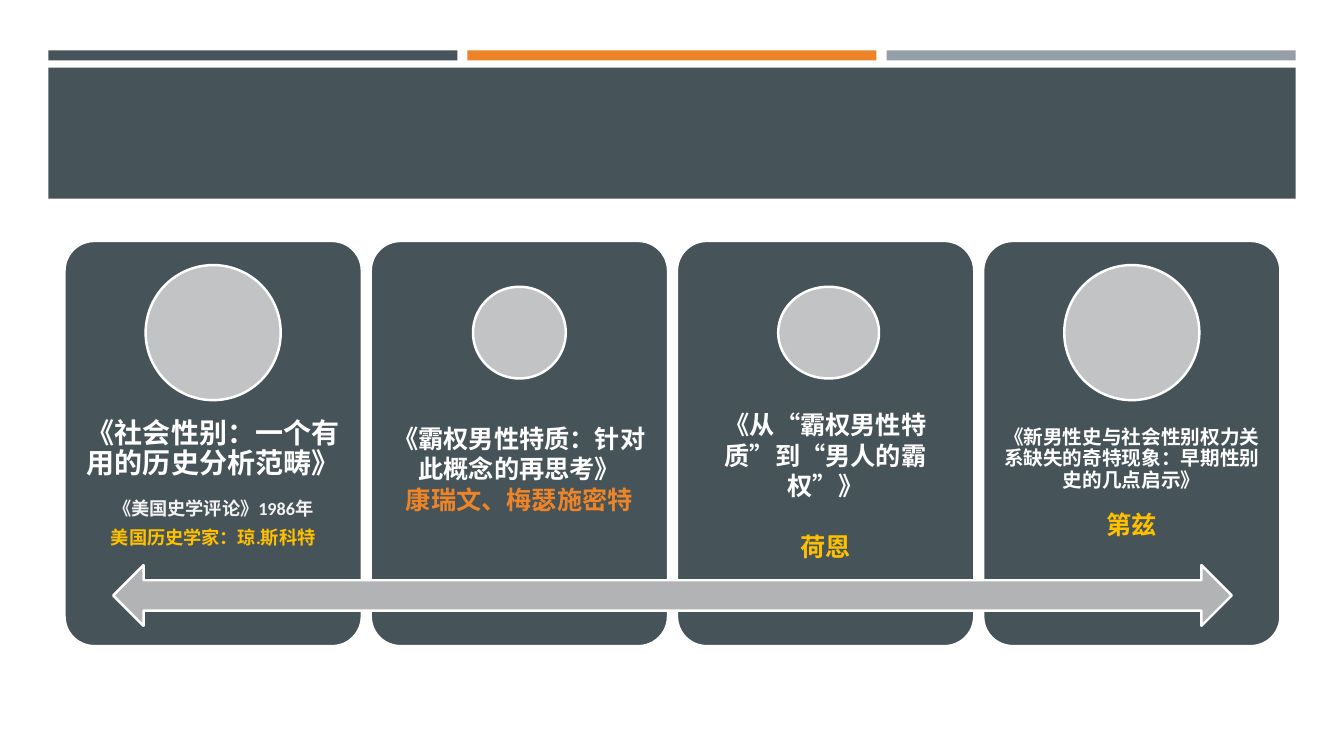
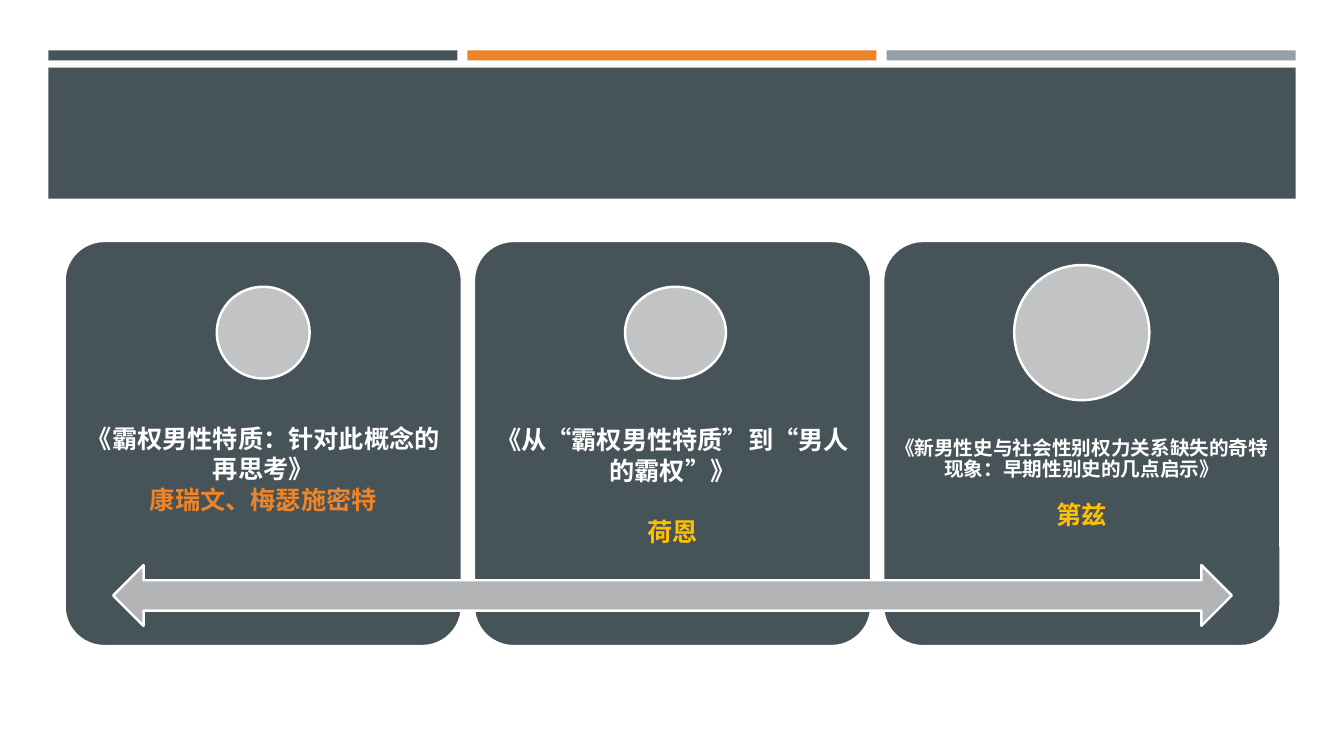
import pptx
import pptx.dml.color
import pptx.enum.shapes
import pptx.enum.text
import pptx.util
from pptx.util import Inches

SHAPES = pptx.enum.shapes.MSO_SHAPE
FONT = "Calibri"
COLORS = {
    "slate": "465359",
    "orange": "ED8428",
    "steel": "969FA7",
    "circle": "C1C3C4",
    "arrow": "B1B3B5",
    "white": "FFFFFF",
    "pale": "F2F2F2",
    "gold": "FFC000",
}

SCOTT = {
    "circle": (1.34, 1.34, 0),
    "insets": (0.16, 0.16, 0.16),
    "lines": [
        ("《社会性别：一个有用的历史分析范畴》", dict(size=20, spacing=0.9)),
        ("《美国史学评论》1986年", dict(size=13, color="pale", spacing=0.9, before=14.3)),
        ("美国历史学家：琼.斯科特", dict(size=13, color="gold", spacing=0.9, before=7)),
    ],
}
CONNELL = {
    "circle": (0.92, 0.91, 0),
    "insets": (0.14, 0.14, 0.44),
    "lines": [
        ("《霸权男性特质：针对此概念的再思考》", dict(size=18)),
        ("康瑞文、梅瑟施密特", dict(size=18, color="orange")),
    ],
}
HEARN = {
    "circle": (1, 0.91, 0.03),
    "insets": (0.14, 0.06, 0.03),
    "lines": [
        ("《从“霸权男性特质”到“男人的霸权”》", dict(size=18)),
        ("荷恩", dict(size=18, color="gold", before=22)),
    ],
}
DITZ = {
    "circle": (1.34, 1.34, 0),
    "insets": (0.11, 0.11, 0.11),
    "lines": [
        ("《新男性史与社会性别权力关系缺失的奇特现象：早期性别史的几点启示》",
         dict(size=14, spacing=0.9)),
        ("第兹", dict(size=18, color="gold", spacing=0.9, before=15.4)),
    ],
}


def rgb(name):
    return pptx.dml.color.RGBColor.from_string(COLORS[name])


def add_block(page, kind, box, fill, outlined=False):
    block = page.shapes.add_shape(kind, *map(Inches, box))
    block.shadow.inherit = False
    block.fill.solid()
    block.fill.fore_color.rgb = rgb(fill)
    if outlined:
        block.line.color.rgb = rgb("white")
        block.line.width = pptx.util.Pt(1.75)
    else:
        block.line.fill.background()
    return block


def write_text(para, text, size=18, color="white", bold=True, spacing=1.0, before=0):
    para.alignment = pptx.enum.text.PP_ALIGN.CENTER
    para.line_spacing = spacing
    para.space_before = pptx.util.Pt(before)
    span = para.add_run()
    span.text = text
    span.font.name = FONT
    span.font.size = pptx.util.Pt(size)
    span.font.bold = bold
    span.font.color.rgb = rgb(color)


def add_header(page, left, top, width):
    gap = 0.1
    strip = (width - 2 * gap) / 3
    for index, color in enumerate(("slate", "orange", "steel")):
        add_block(page, SHAPES.RECTANGLE,
                  (left + index * (strip + gap), top, strip, 0.1), color)
    add_block(page, SHAPES.RECTANGLE, (left, top + 0.17, width, 1.3), "slate")


def add_card(page, work, left, top, width, height):
    card = add_block(page, SHAPES.ROUNDED_RECTANGLE,
                     (left, top, width, height), "slate", outlined=True)
    card.adjustments[0] = 0.1

    caption = page.shapes.add_textbox(
        *map(Inches, (left, top + 0.4 * height, width, 0.4 * height)))
    frame = caption.text_frame
    frame.word_wrap = True
    frame.vertical_anchor = pptx.enum.text.MSO_ANCHOR.MIDDLE
    side, upper, lower = map(Inches, work["insets"])
    frame.margin_left = frame.margin_right = side
    frame.margin_top, frame.margin_bottom = upper, lower
    for index, (text, style) in enumerate(work["lines"]):
        para = frame.add_paragraph() if index else frame.paragraphs[0]
        write_text(para, text, **style)

    circle_width, circle_height, shift = work["circle"]
    add_block(page, SHAPES.OVAL,
              (left + (width - circle_width) / 2 + shift,
               top + 0.91 - circle_height / 2, circle_width, circle_height),
              "circle", outlined=True)


def add_timeline(page, works, left, top, width, height):
    gap_share = 0.03
    count = len(works)
    card_width = width / (count + gap_share * (count - 1))
    for index, work in enumerate(works):
        add_card(page, work, left + index * card_width * (1 + gap_share),
                 top, card_width, height)
    add_block(page, SHAPES.LEFT_RIGHT_ARROW,
              (left + 0.04 * width, top + 0.8 * height, 0.92 * width, 0.15 * height),
              "arrow", outlined=True)


def add_page(deck, works):
    page = deck.slides.add_slide(deck.slide_layouts[6])
    add_header(page, 0.48, 0.5, 12.37)
    add_timeline(page, works, 0.64, 2.39, 12.06, 4.02)


def main():
    deck = pptx.Presentation()
    deck.slide_width = Inches(13.33)
    deck.slide_height = Inches(7.5)
    for works in ((SCOTT, CONNELL, HEARN, DITZ), (CONNELL, HEARN, DITZ)):
        add_page(deck, works)
    deck.save("out.pptx")


if __name__ == "__main__":
    main()
